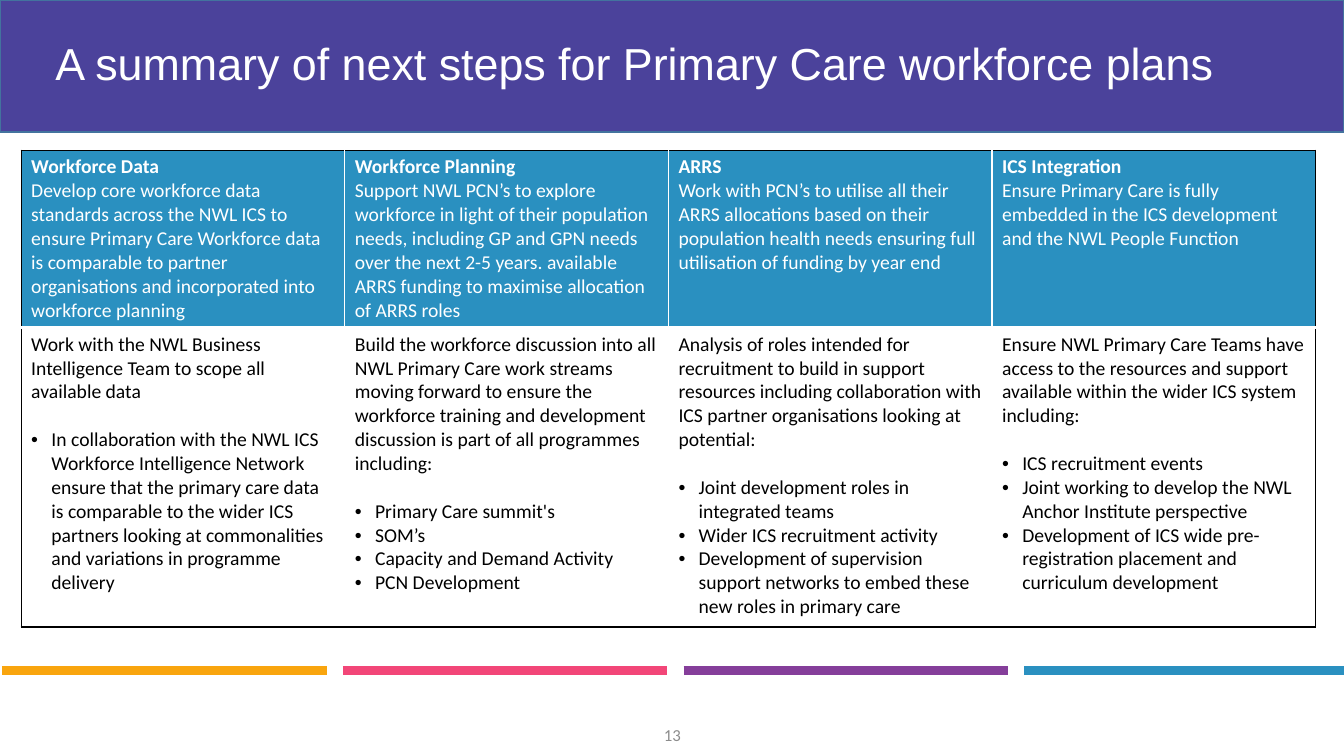
from pptx import Presentation
from pptx.dml.color import RGBColor
from pptx.enum.shapes import MSO_CONNECTOR, MSO_SHAPE
from pptx.enum.text import MSO_ANCHOR, MSO_AUTO_SIZE, PP_ALIGN
from pptx.oxml.ns import qn
from pptx.util import Inches, Pt
from lxml import etree

RECTANGLE = MSO_SHAPE.RECTANGLE
STRAIGHT = MSO_CONNECTOR.STRAIGHT
MIDDLE = MSO_ANCHOR.MIDDLE
TOP = MSO_ANCHOR.TOP
NO_AUTOFIT = MSO_AUTO_SIZE.NONE
LEFT = PP_ALIGN.LEFT
CENTER = PP_ALIGN.CENTER

WHITE = RGBColor(0xFF, 0xFF, 0xFF)
BLACK = RGBColor(0x00, 0x00, 0x00)
GREY = RGBColor(0x8C, 0x8C, 0x8C)
INDIGO = RGBColor(0x4B, 0x42, 0x9B)
STEEL = RGBColor(0x43, 0x73, 0x9E)
ORANGE = RGBColor(0xF9, 0xA5, 0x0E)
PINK = RGBColor(0xF2, 0x46, 0x78)
PURPLE = RGBColor(0x85, 0x3E, 0x9A)
BLUE = RGBColor(0x2A, 0x90, 0xC0)

TITLE_FONT = {"name": "Arial", "size": Pt(32), "bold": False}
HEADING_FONT = {"name": "Calibri", "size": Pt(14), "bold": True}
BODY_FONT = {"name": "Calibri", "size": Pt(14), "bold": False}
NUMBER_FONT = {"name": "Calibri", "size": Pt(12), "bold": False}

WORKSTREAMS = [
    {
        "heading": "Workforce Data",
        "aim": "Develop core workforce data standards across the NWL ICS to ensure Primary Care "
               "Workforce data is comparable to partner organisations and incorporated into "
               "workforce planning",
        "action": "Work with the NWL Business Intelligence Team to scope all available data",
        "bullets": [
            "In collaboration with the NWL ICS Workforce Intelligence Network ensure that the "
            "primary care data is comparable to the wider ICS partners looking at commonalities "
            "and variations in programme delivery",
        ],
    },
    {
        "heading": "Workforce Planning",
        "aim": "Support NWL PCN’s to explore workforce in light of their population needs, "
               "including GP and GPN needs over the next 2-5 years. available ARRS funding to "
               "maximise allocation of ARRS roles",
        "action": "Build the workforce discussion into all NWL Primary Care work streams moving "
                  "forward to ensure the workforce training and development discussion is part "
                  "of all programmes including:",
        "bullets": [
            "Primary Care summit's",
            "SOM’s",
            "Capacity and Demand Activity",
            "PCN Development",
        ],
    },
    {
        "heading": "ARRS",
        "aim": "Work with PCN’s to utilise all their ARRS allocations based on their population "
               "health needs ensuring full utilisation of funding by year end",
        "action": "Analysis of roles intended for recruitment to build in support resources "
                  "including collaboration with ICS partner organisations looking at potential:",
        "bullets": [
            "Joint development roles in integrated teams",
            "Wider ICS recruitment activity",
            "Development of supervision support networks to embed these new roles in primary care",
        ],
    },
    {
        "heading": "ICS Integration",
        "aim": "Ensure Primary Care is fully embedded in the ICS development and the NWL People "
               "Function",
        "action": "Ensure NWL Primary Care Teams have access to the resources and support "
                  "available within the wider ICS system including:",
        "bullets": [
            "ICS recruitment events",
            "Joint working to develop the NWL Anchor Institute perspective",
            "Development of ICS wide pre- registration placement and curriculum development",
        ],
    },
]


def format_font(font, values, color):
    for name, value in values.items():
        setattr(font, name, value)
    font.color.rgb = color


def write_paragraph(frame, text, values, color, first=False):
    para = frame.paragraphs[0] if first else frame.add_paragraph()
    para.text = text
    format_font(para.font, values, color)
    format_font(para.runs[0].font, values, color)
    return para


def write_bullet(frame, text, values, color):
    para = frame.add_paragraph()
    properties = para._p.get_or_add_pPr()
    properties.set("marL", str(Inches(0.2)))
    properties.set("indent", str(Inches(-0.2)))
    etree.SubElement(properties, qn("a:buFont"), typeface="Arial")
    etree.SubElement(properties, qn("a:buChar"), char="•")
    para.text = text
    format_font(para.runs[0].font, values, color)
    return para


def set_borders(cell, borders):
    properties = cell._tc.get_or_add_tcPr()
    for side, (color, width) in borders.items():
        line = etree.SubElement(properties, qn(f"a:ln{side}"), w=str(Pt(width)))
        fill = etree.SubElement(line, qn("a:solidFill"))
        etree.SubElement(fill, qn("a:srgbClr"), val=str(color))


def add_banner(slide, left, top, width, height):
    banner = slide.shapes.add_shape(RECTANGLE, left, top, width, height)
    banner.shadow.inherit = False
    banner.fill.solid()
    banner.fill.fore_color.rgb = INDIGO
    banner.line.color.rgb = STEEL
    banner.line.width = Pt(1)
    title = slide.shapes.title
    title.element.addprevious(banner.element)
    title.left, title.top = left + Inches(0.45), top + Inches(0.36)
    title.width, title.height = width - Inches(0.89), Inches(0.59)
    frame = title.text_frame
    frame.auto_size = NO_AUTOFIT
    frame.vertical_anchor = MIDDLE
    para = write_paragraph(frame, "A summary of next steps for Primary Care workforce plans",
                           TITLE_FONT, WHITE, first=True)
    para.alignment = LEFT
    para.line_spacing = 0.9


def add_workstream_table(slide, left, top, width, height):
    count = len(WORKSTREAMS)
    table = slide.shapes.add_table(2, count, left, top, width, height).table
    table.horz_banding = False
    header_height = Inches(1.76)
    table.rows[0].height = header_height
    table.rows[1].height = height - header_height
    for index, workstream in enumerate(WORKSTREAMS):
        table.columns[index].width = width // count
        sides = {
            "L": (BLACK if index == 0 else WHITE, 1),
            "R": (BLACK if index == count - 1 else WHITE, 1),
        }
        header, detail = table.cell(0, index), table.cell(1, index)
        set_borders(header, {**sides, "T": (BLACK, 1), "B": (WHITE, 3)})
        set_borders(detail, {**sides, "T": (WHITE, 3), "B": (BLACK, 1)})
        for cell, color in ((header, BLUE), (detail, WHITE)):
            cell.fill.solid()
            cell.fill.fore_color.rgb = color
            cell.vertical_anchor = TOP
        write_paragraph(header.text_frame, workstream["heading"], HEADING_FONT, WHITE, first=True)
        write_paragraph(header.text_frame, workstream["aim"], BODY_FONT, WHITE)
        write_paragraph(detail.text_frame, workstream["action"], BODY_FONT, BLACK, first=True)
        bullets = [write_bullet(detail.text_frame, text, BODY_FONT, BLACK)
                   for text in workstream["bullets"]]
        bullets[0].space_before = Pt(17)


def add_color_strip(slide, left, top, pitch, length):
    for index, color in enumerate((ORANGE, PINK, PURPLE, BLUE)):
        start = left + index * pitch
        bar = slide.shapes.add_connector(STRAIGHT, start, top, start + length, top)
        bar.line.color.rgb = color
        bar.line.width = Pt(6)
        etree.SubElement(bar.element.spPr, qn("a:effectLst"))


def add_page_number(slide, left, top, width, height):
    box = slide.shapes.add_textbox(left, top, width, height)
    frame = box.text_frame
    frame.word_wrap = True
    frame.vertical_anchor = MIDDLE
    write_paragraph(frame, "13", NUMBER_FONT, GREY, first=True).alignment = CENTER


def main():
    deck = Presentation()
    deck.slide_width, deck.slide_height = Inches(13.33), Inches(7.5)
    slide = deck.slides.add_slide(deck.slide_layouts[5])
    add_banner(slide, 0, 0, deck.slide_width, Inches(1.31))
    add_color_strip(slide, Inches(0.02), Inches(6.65), Inches(3.38), Inches(3.22))
    add_page_number(slide, Inches(5.17), Inches(7.09), Inches(3), Inches(0.4))
    add_workstream_table(slide, Inches(0.21), Inches(1.49), Inches(12.84), Inches(4.73))
    deck.save("out.pptx")


if __name__ == "__main__":
    main()
